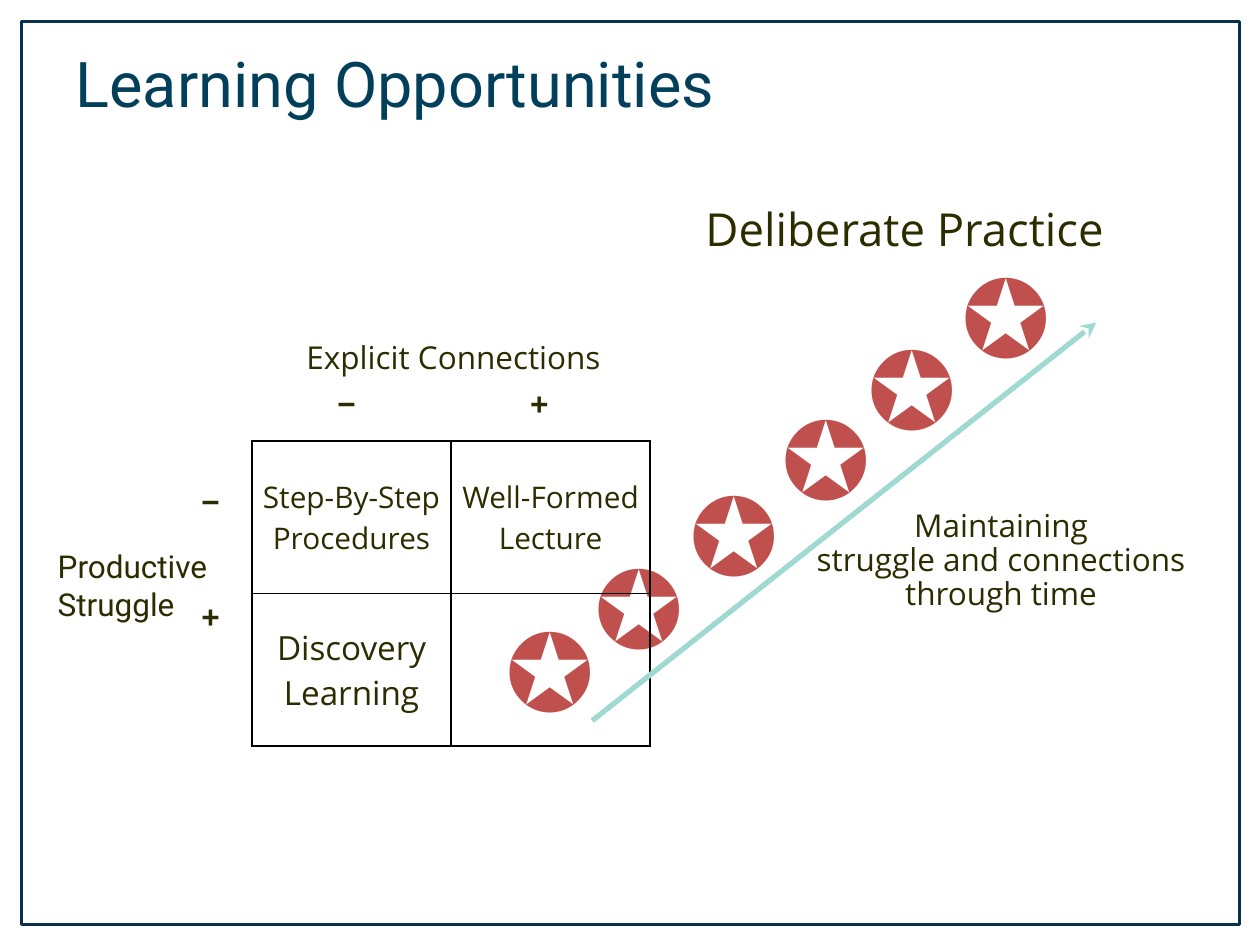
from lxml.etree import SubElement
from pptx import Presentation
from pptx.dml.color import RGBColor
from pptx.enum.shapes import MSO_CONNECTOR as Connector, MSO_SHAPE as Shape
from pptx.enum.text import MSO_ANCHOR as Anchor, PP_ALIGN as Align
from pptx.oxml.ns import qn
from pptx.util import Inches, Pt

NAVY, TITLE_BLUE, OLIVE = "073049", "023F5A", "2C2C00"
RED, TEAL, BLACK = "C0504D", "A0D9D1", "000000"
STAR, STAR_SIZE = "✪", 61


def color(hex_value):
    return RGBColor.from_string(hex_value)


def write(frame, text, size, font, ink=OLIVE, align=Align.LEFT, bold=False,
          spacing=None):
    frame.text = text
    for line in frame.paragraphs:
        line.alignment = align
        if spacing:
            line.line_spacing = spacing
        for run in line.runs:
            run.font.size = Pt(size)
            run.font.name = font
            run.font.bold = bold
            run.font.color.rgb = color(ink)


def add_label(slide, box, text, size, font="Open Sans", **style):
    label = slide.shapes.add_textbox(*map(Inches, box)).text_frame
    label.word_wrap = True
    write(label, text, size, font, **style)
    return label


def add_star(slide, left, top):
    add_label(slide, (left, top, 0.88, 1.13), STAR, STAR_SIZE, "Arial",
              ink=RED, align=Align.CENTER)


def add_frame(slide):
    frame = slide.shapes.add_shape(
        Shape.RECTANGLE, *map(Inches, (0.17, 0.17, 9.67, 7.17)))
    frame.shadow.inherit = False
    frame.fill.background()
    frame.line.color.rgb = color(NAVY)
    frame.line.width = Pt(1.5)


def add_title(slide, text):
    title = slide.shapes.title
    title.left, title.top, title.width, title.height = map(
        Inches, (0.5, 0.33, 9, 0.67))
    title.text_frame.vertical_anchor = Anchor.BOTTOM
    write(title.text_frame, text, 36, "Roboto", ink=TITLE_BLUE)


def outline_cell(cell):
    properties = cell._tc.get_or_add_tcPr()
    for index, side in enumerate(("lnL", "lnR", "lnT", "lnB")):
        border = SubElement(properties, qn(f"a:{side}"), w=str(Pt(1)))
        fill = SubElement(border, qn("a:solidFill"))
        SubElement(fill, qn("a:srgbClr"), val=BLACK)
        properties.insert(index, border)


def add_matrix(slide, rows):
    matrix = slide.shapes.add_table(
        2, 2, *map(Inches, (2, 3.5, 3.16, 2.42))).table
    matrix.first_row = matrix.horz_banding = False
    for r, row in enumerate(rows):
        for c, (text, size, ink) in enumerate(row):
            cell = matrix.cell(r, c)
            cell.fill.background()
            cell.vertical_anchor = Anchor.MIDDLE
            cell.margin_left = cell.margin_right = Inches(0.07)
            cell.margin_top = cell.margin_bottom = Inches(0.03)
            write(cell.text_frame, text, size, "Open Sans", ink=ink,
                  align=Align.CENTER)
            outline_cell(cell)


def add_signs(slide):
    # Column signs, set apart by a tab stop
    columns = add_label(slide, (2.58, 3, 3.67, 0.4), "−\t+", 18, "Arial", bold=True)
    properties = columns.paragraphs[0]._p.get_or_add_pPr()
    stops = SubElement(properties, qn("a:tabLst"))
    SubElement(stops, qn("a:tab"), pos=str(Inches(1.53)), algn="l")

    # Row signs, set apart by paragraph spacing
    rows = add_label(slide, (1.5, 3.78, 0.83, 1.31), "−\n+", 18, "Arial", bold=True)
    rows.paragraphs[1].space_before = Pt(44)


def add_arrow(slide, start, end):
    arrow = slide.shapes.add_connector(
        Connector.STRAIGHT, *map(Inches, start + end))
    arrow.line.color.rgb = color(TEAL)
    arrow.line.width = Pt(3)
    SubElement(arrow.line._get_or_add_ln(), qn("a:tailEnd"), type="stealth")
    SubElement(arrow._element.spPr, qn("a:effectLst"))


def main():
    deck = Presentation()
    deck.slide_width, deck.slide_height = Inches(10), Inches(7.5)
    slide = deck.slides.add_slide(deck.slide_layouts[5])

    add_frame(slide)
    add_title(slide, "Learning Opportunities")

    # Matrix of teaching approaches, over the first star of the path
    add_star(slide, 4.62, 4.25)
    add_matrix(slide, [
        [("Step-By-Step Procedures", 17, OLIVE), ("Well-Formed Lecture", 17, OLIVE)],
        [("Discovery Learning", 19, OLIVE), (STAR, STAR_SIZE, RED)],
    ])

    # Axes of the matrix
    add_label(slide, (2.12, 2.67, 2.96, 0.4), "Explicit Connections", 18,
              align=Align.CENTER, spacing=0.9)
    add_label(slide, (0.36, 4.29, 1.44, 0.71), "Productive\nStruggle", 18, "Roboto")
    add_signs(slide)

    # Path of deliberate practice
    for left, top in [(5.37, 3.67), (6.1, 3.07), (6.79, 2.51), (7.53, 1.94)]:
        add_star(slide, left, top)
    add_arrow(slide, (4.7, 5.72), (8.7, 2.56))
    add_label(slide, (5.5, 1.58, 3.52, 0.57), "Deliberate Practice", 26, spacing=0.95)
    add_label(slide, (6.25, 4, 3.39, 1.01),
              "Maintaining\nstruggle and connections\nthrough time", 18,
              align=Align.CENTER, spacing=0.9)

    deck.save("out.pptx")


if __name__ == "__main__":
    main()
